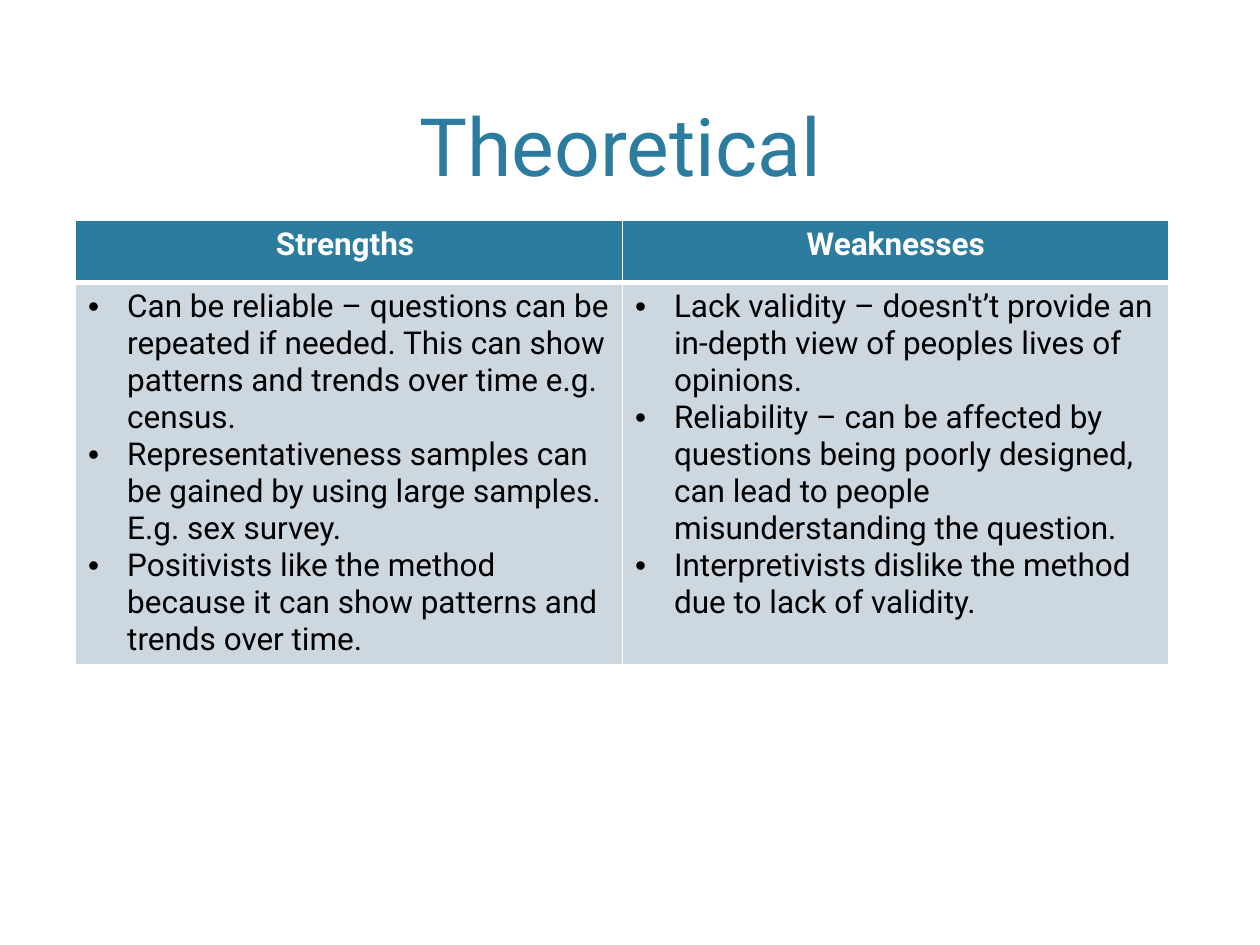
from lxml import etree
from pptx import Presentation
from pptx.dml.color import RGBColor
from pptx.enum import text
from pptx.oxml import ns
from pptx.util import Inches, Pt

TITLE = "Theoretical "
COLUMNS = [
    ("Strengths ", [
        "Can be reliable – questions can be repeated if needed. This can show "
        "patterns and trends over time e.g. census.",
        "Representativeness samples can be gained by using large samples. E.g. sex survey.",
        "Positivists like the method because it can show patterns and trends over time.",
    ]),
    ("Weaknesses", [
        "Lack validity – doesn't’t provide an in-depth view of peoples lives of opinions.",
        "Reliability – can be affected by questions being poorly designed, can lead to "
        "people misunderstanding the question.",
        "Interpretivists dislike the method due to lack of validity.",
    ]),
]
COLORS = {"teal": "2C7C9F", "pale": "CDD7DF", "white": "FFFFFF", "black": "000000"}
FONT = "Roboto"
COLUMN_WIDTH = 4.34
HEADER_HEIGHT, BODY_HEIGHT = 0.49, 3.03
BULLET_INDENT = Inches(0.31)


def rgb(name):
    return RGBColor.from_string(COLORS[name])


def add_run(paragraph, words, size, color, bold=False):
    run = paragraph.add_run()
    run.text = words
    run.font.name = FONT
    run.font.size = Pt(size)
    run.font.bold = bold
    run.font.color.rgb = rgb(color)


def add_bullet(paragraph):
    properties = paragraph._p.get_or_add_pPr()
    properties.set("marL", str(BULLET_INDENT))
    properties.set("indent", str(-BULLET_INDENT))
    etree.SubElement(properties, ns.qn("a:buFont")).set("typeface", "Arial")
    etree.SubElement(properties, ns.qn("a:buChar")).set("char", "•")


def style_cell(cell, fill, top=1, bottom=1):
    """Fill the cell and draw white borders, with top and bottom widths in points."""
    cell.fill.solid()
    cell.fill.fore_color.rgb = rgb(fill)
    properties = cell._tc.get_or_add_tcPr()
    widths = {"a:lnL": 1, "a:lnR": 1, "a:lnT": top, "a:lnB": bottom}
    for position, (side, width) in enumerate(widths.items()):
        line = etree.Element(ns.qn(side), w=str(Pt(width)))
        solid = etree.SubElement(line, ns.qn("a:solidFill"))
        etree.SubElement(solid, ns.qn("a:srgbClr")).set("val", COLORS["white"])
        properties.insert(position, line)


def add_title(slide):
    title = slide.shapes.title
    title.left, title.top = Inches(0.6), Inches(0.12)
    title.width, title.height = Inches(8.8), Inches(1.46)
    title.text_frame.vertical_anchor = text.MSO_ANCHOR.BOTTOM
    heading = title.text_frame.paragraphs[0]
    heading.alignment = text.PP_ALIGN.CENTER
    add_run(heading, TITLE, 46, "teal")


def add_comparison(slide):
    table = slide.shapes.add_table(
        2, len(COLUMNS), Inches(0.6), Inches(1.75),
        Inches(COLUMN_WIDTH * len(COLUMNS)), Inches(HEADER_HEIGHT + BODY_HEIGHT)).table
    table.rows[0].height = Inches(HEADER_HEIGHT)
    table.rows[1].height = Inches(BODY_HEIGHT)
    for column, (heading, points) in enumerate(COLUMNS):
        table.columns[column].width = Inches(COLUMN_WIDTH)
        header, body = table.cell(0, column), table.cell(1, column)
        style_cell(header, "teal", bottom=3)
        style_cell(body, "pale", top=3)
        label = header.text_frame.paragraphs[0]
        label.alignment = text.PP_ALIGN.CENTER
        add_run(label, heading, 18, "white", bold=True)
        for number, point in enumerate(points):
            frame = body.text_frame
            paragraph = frame.add_paragraph() if number else frame.paragraphs[0]
            add_bullet(paragraph)
            add_run(paragraph, point, 18, "black")


def main():
    deck = Presentation()
    deck.slide_width, deck.slide_height = Inches(10), Inches(7.5)
    slide = deck.slides.add_slide(deck.slide_layouts[5])
    add_title(slide)
    add_comparison(slide)
    deck.save("out.pptx")


if __name__ == "__main__":
    main()
